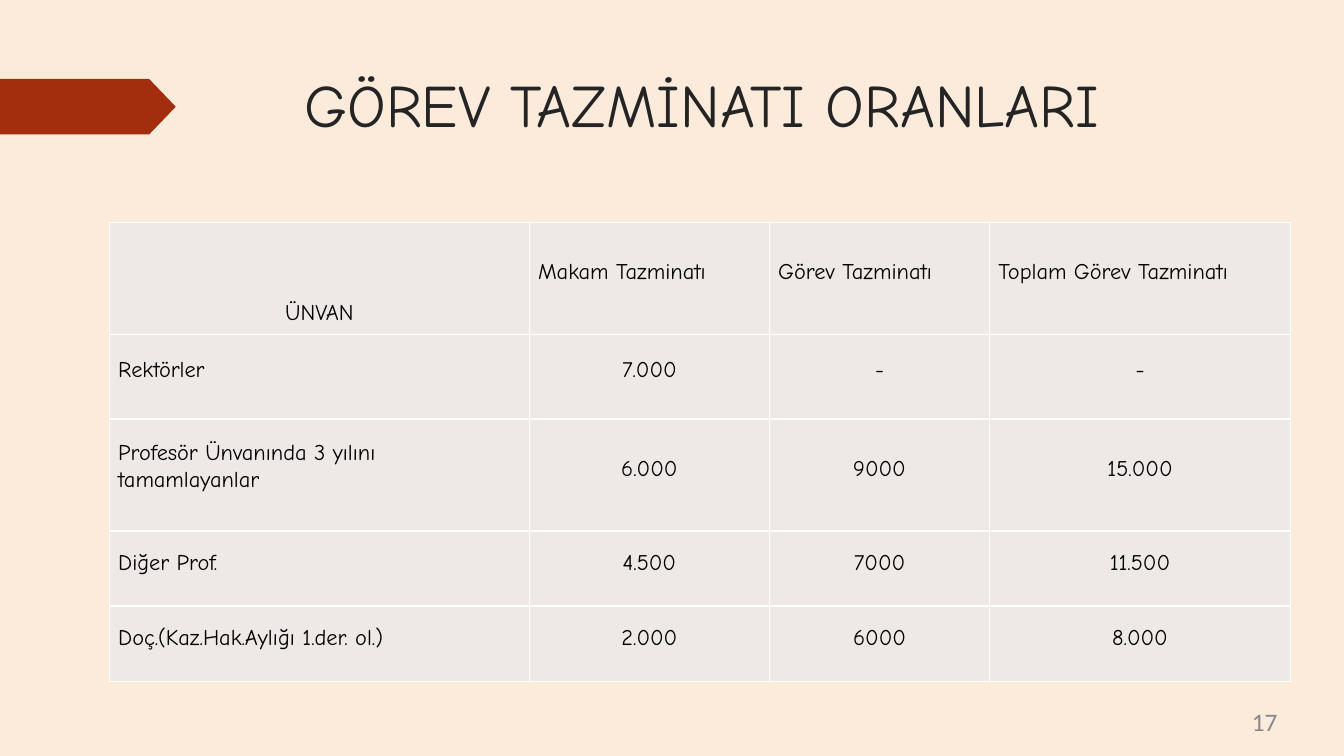
import lxml.etree
import pptx
import pptx.dml.color
import pptx.enum.shapes
import pptx.enum.text
import pptx.oxml.ns
import pptx.util
from dataclasses import dataclass

Cm = pptx.util.Cm
Pt = pptx.util.Pt
Align = pptx.enum.text.PP_ALIGN


@dataclass(frozen=True)
class Theme:
    background: str = "FCEADA"
    accent: str = "A32E0E"
    title: str = "242424"
    number: str = "888888"
    cell: str = "EEE8E7"
    border: str = "FFFFFF"
    text: str = "000000"
    main_font: str = "Comic Neue"
    number_font: str = "Calibri"
    title_size: int = 43
    number_size: int = 18
    table_size: int = 16


theme = Theme()


def style_text(paragraph, text, size, font, color):
    paragraph.text = text
    paragraph.font.size = Pt(size)
    paragraph.font.name = font
    paragraph.font.color.rgb = pptx.dml.color.RGBColor.from_string(color)


def add_border(cell, color):
    properties = cell._tc.get_or_add_tcPr()
    for side in ("a:lnL", "a:lnR", "a:lnT", "a:lnB"):
        line = lxml.etree.SubElement(properties, pptx.oxml.ns.qn(side), w=str(Pt(1)))
        fill = lxml.etree.SubElement(line, pptx.oxml.ns.qn("a:solidFill"))
        lxml.etree.SubElement(fill, pptx.oxml.ns.qn("a:srgbClr"), val=color)


presentation = pptx.Presentation()
presentation.slide_width = Cm(33.87)
presentation.slide_height = Cm(19.05)
slide = presentation.slides.add_slide(presentation.slide_layouts[6])
slide.background.fill.solid()
slide.background.fill.fore_color.rgb = pptx.dml.color.RGBColor.from_string(theme.background)

arrow = slide.shapes.add_shape(
    pptx.enum.shapes.MSO_SHAPE.PENTAGON, Cm(0), Cm(1.99), Cm(4.43), Cm(1.4)
)
arrow.adjustments[0] = 0.48
arrow.shadow.inherit = False
arrow.fill.solid()
arrow.fill.fore_color.rgb = pptx.dml.color.RGBColor.from_string(theme.accent)
arrow.line.fill.background()

text_boxes = [
    ("GÖREV TAZMİNATI ORANLARI", 7.67, 1.7, 23.8, 1.88,
     theme.title_size, theme.main_font, theme.title),
    ("17", 31.55, 17.81, 0.8, 0.71,
     theme.number_size, theme.number_font, theme.number),
]
for text, left, top, width, height, size, font, color in text_boxes:
    text_box = slide.shapes.add_textbox(Cm(left), Cm(top), Cm(width), Cm(height))
    frame = text_box.text_frame
    frame.word_wrap = True
    frame.margin_left = frame.margin_right = frame.margin_top = frame.margin_bottom = 0
    style_text(frame.paragraphs[0], text, size, font, color)

rows = [
    ("ÜNVAN", "Makam Tazminatı", "Görev Tazminatı", "Toplam Görev Tazminatı"),
    ("Rektörler", "7.000", "-", "-"),
    ("Profesör Ünvanında 3 yılını tamamlayanlar", "6.000", "9000", "15.000"),
    ("Diğer Prof.", "4.500", "7000", "11.500"),
    ("Doç.(Kaz.Hak.Aylığı 1.der. ol.)", "2.000", "6000", "8.000"),
]
column_widths = [10.58, 6.05, 5.55, 7.58]
row_heights = [2.82, 2.14, 2.82, 1.89, 1.91]
first_column_tops = [1.96, 0.58, 0.48, 0.48, 0.48]
value_tops = [0.93, 0.58, 0.93, 0.48, 0.48]

table = slide.shapes.add_table(
    len(rows), len(column_widths), Cm(2.76), Cm(5.6),
    Cm(sum(column_widths)), Cm(sum(row_heights)),
).table
table.first_row = False
table.horz_banding = False
for column, width in zip(table.columns, column_widths):
    column.width = Cm(width)

for row_index, values in enumerate(rows):
    table.rows[row_index].height = Cm(row_heights[row_index])
    for column_index, value in enumerate(values):
        cell = table.cell(row_index, column_index)
        add_border(cell, theme.border)
        cell.fill.solid()
        cell.fill.fore_color.rgb = pptx.dml.color.RGBColor.from_string(theme.cell)
        centered = (row_index == 0) == (column_index == 0)
        tops = value_tops if column_index else first_column_tops
        cell.margin_top = Cm(tops[row_index])
        cell.margin_bottom = 0
        cell.margin_left = Cm(0 if centered else 0.22)
        cell.margin_right = Cm(0 if centered or column_index else 1)
        paragraph = cell.text_frame.paragraphs[0]
        style_text(paragraph, value, theme.table_size, theme.main_font, theme.text)
        paragraph.alignment = Align.CENTER if centered else Align.LEFT
        if (row_index, column_index) == (2, 0):
            paragraph.line_spacing = 1.07

presentation.save("out.pptx")
